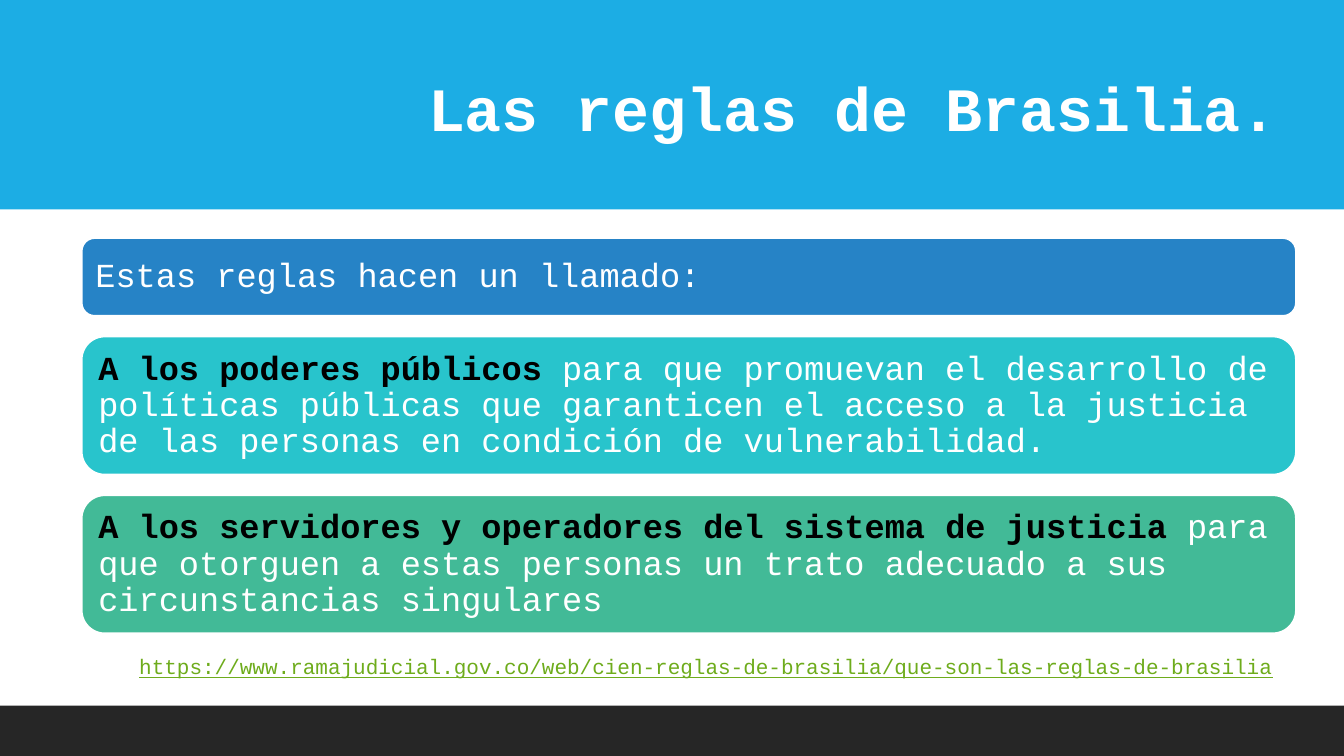
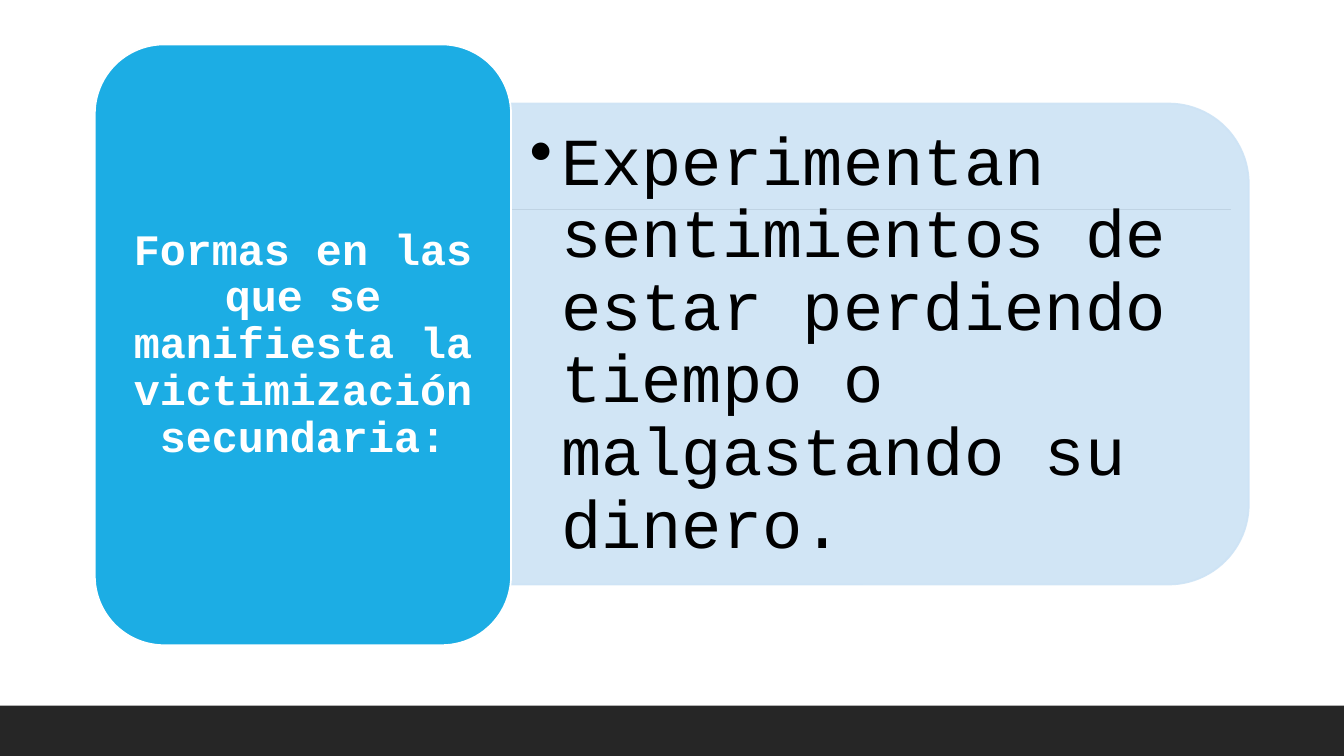
"""Build two slides on the rules of Brasilia and secondary harm."""
from dataclasses import dataclass

from lxml import etree
from pptx import Presentation
from pptx.dml.color import RGBColor
from pptx.enum.shapes import MSO_CONNECTOR, MSO_SHAPE
from pptx.enum.text import MSO_ANCHOR, MSO_AUTO_SIZE, PP_ALIGN
from pptx.oxml.ns import qn
from pptx.shapes.autoshape import Shape
from pptx.slide import Slide
from pptx.text.text import TextFrame, _Paragraph
from pptx.util import Cm, Pt

RECT = MSO_SHAPE.RECTANGLE
ROUND = MSO_SHAPE.ROUNDED_RECTANGLE
TAB = MSO_SHAPE.ROUND_2_SAME_RECTANGLE
LINE = MSO_CONNECTOR.STRAIGHT
MIDDLE = MSO_ANCHOR.MIDDLE
TOP = MSO_ANCHOR.TOP
FIXED = MSO_AUTO_SIZE.NONE
LEFT, CENTER, RIGHT = PP_ALIGN.LEFT, PP_ALIGN.CENTER, PP_ALIGN.RIGHT
TITLE_ONLY, BLANK = 5, 6


@dataclass(frozen=True)
class Theme:
    font: str = "Courier New"
    white: str = "FFFFFF"
    black: str = "000000"
    sky: str = "1CADE4"
    blue: str = "2683C6"
    teal: str = "28C4CC"
    green: str = "42BA97"
    pale: str = "CDE3F5"
    dark: str = "262626"
    rule: str = "404040"
    link: str = "6EAC1C"
    title: float = 44
    body: float = 24
    small: float = 15
    label: float = 31
    large: float = 48
    edge: float = 1.25
    tight: float = 0.9


@dataclass(frozen=True)
class Box:
    left: float
    top: float
    width: float
    height: float

    def place(self) -> tuple[Cm, Cm, Cm, Cm]:
        return Cm(self.left), Cm(self.top), Cm(self.width), Cm(self.height)


@dataclass(frozen=True)
class Card:
    fill: str
    height: float
    lead: str
    text: str


THEME = Theme()
WIDTH, HEIGHT = 33.87, 19.05
BAND = Box(0, 0, WIDTH, 5.28)
FOOT = Box(0, 17.78, WIDTH, 1.27)
STACK = Box(2.06, 6, 30.6, 9.96)
GAP = 0.52
CARDS = (
    Card(THEME.blue, 1.96, "", "Estas reglas hacen un llamado:"),
    Card(THEME.teal, 3.48, "A los poderes públicos ",
         "para que promuevan el desarrollo de políticas públicas que garanticen "
         "el acceso a la justicia de las personas en condición de vulnerabilidad."),
    Card(THEME.green, 3.48, "A los servidores y operadores del sistema de justicia ",
         "para que otorguen a estas personas un trato adecuado a sus "
         "circunstancias singulares"),
)
LINK = ("https://www.ramajudicial.gov.co/web/cien-reglas-de-brasilia/"
        "que-son-las-reglas-de-brasilia")


def color(code: str) -> RGBColor:
    """Turn a hex code into a colour."""
    return RGBColor.from_string(code)


def shape(slide: Slide, kind: MSO_SHAPE, box: Box, fill: str,
          edge: str | None = None) -> Shape:
    """Draw a flat filled shape, with an outline if one is given."""
    item = slide.shapes.add_shape(kind, *box.place())
    item.shadow.inherit = False
    item.fill.solid()
    item.fill.fore_color.rgb = color(fill)
    if edge:
        item.line.color.rgb = color(edge)
        item.line.width = Pt(THEME.edge)
    else:
        item.line.fill.background()
    return item


def frame(item: Shape, side: float, end: float,
          anchor: MSO_ANCHOR = MIDDLE) -> TextFrame:
    """Set the wrapping, insets and anchor of a text frame."""
    body = item.text_frame
    body.word_wrap = True
    body.auto_size = FIXED
    body.vertical_anchor = anchor
    body.margin_left = body.margin_right = Cm(side)
    body.margin_top = body.margin_bottom = Cm(end)
    return body


def style(para: _Paragraph, size: float, ink: str, align: PP_ALIGN = LEFT,
          bold: bool = False, space: float = THEME.tight) -> None:
    """Set the font, alignment and line spacing of a paragraph."""
    para.alignment = align
    para.line_spacing = space
    para.space_before = para.space_after = Pt(0)
    para.font.name = THEME.font
    para.font.size = Pt(size)
    para.font.bold = bold
    para.font.color.rgb = color(ink)


def bullet(para: _Paragraph, indent: float) -> None:
    """Give a paragraph a round bullet with a hanging indent."""
    props = para._p.get_or_add_pPr()
    props.set("marL", str(Cm(indent)))
    props.set("indent", str(-Cm(indent)))
    etree.SubElement(props, qn("a:buChar")).set("char", "•")


def fade(item: Shape, share: int) -> None:
    """Set the opacity of the fill and outline in percent."""
    for tint in item.element.spPr.iter(qn("a:srgbClr")):
        etree.SubElement(tint, qn("a:alpha")).set("val", str(share * 1000))


def footer(slide: Slide) -> None:
    """Draw the dark band at the foot."""
    shape(slide, RECT, FOOT, THEME.dark)


def header(slide: Slide, text: str) -> None:
    """Draw the top band and set the title over it."""
    shape(slide, RECT, BAND, THEME.sky)
    title = slide.shapes.title
    title.left, title.top, title.width, title.height = Box(
        2.06, 1.4, 30.17, 2.84).place()
    para = frame(title, 0, 0.13).paragraphs[0]
    para.text = text
    style(para, THEME.title, THEME.white, RIGHT, True)
    title.element.getparent().append(title.element)


def stack(slide: Slide) -> None:
    """Draw the cards one below the other."""
    top = STACK.top
    for card in CARDS:
        box = Box(STACK.left, top, STACK.width, card.height)
        item = shape(slide, ROUND, box, card.fill, THEME.white)
        para = frame(item, 0.25, 0.25).paragraphs[0]
        style(para, THEME.body, THEME.white)
        if card.lead:
            lead = para.add_run()
            lead.text = card.lead
            lead.font.bold = True
            lead.font.color.rgb = color(THEME.black)
        para.add_run().text = card.text
        top += card.height + GAP


def source(slide: Slide) -> None:
    """Write the web address under the cards."""
    item = slide.shapes.add_textbox(*Box(2.72, 16.33, 29.62, 0.89).place())
    para = frame(item, 0.25, 0.13, TOP).paragraphs[0]
    para.text = LINK
    style(para, THEME.small, THEME.link, RIGHT, space=1.0)
    para.font.underline = True


def rule(slide: Slide) -> None:
    """Draw the thin line behind the panel."""
    line = slide.shapes.add_connector(LINE, Cm(3.33), Cm(5.28), Cm(31.01), Cm(5.28))
    line.line.color.rgb = color(THEME.rule)
    line.line.width = Pt(1)
    etree.SubElement(line.element.spPr, qn("a:effectLst"))


def panel(slide: Slide) -> None:
    """Draw the pale panel with its bullet text."""
    back = shape(slide, TAB, Box(16.1, -0.64, 12.12, 18.62), THEME.pale, THEME.pale)
    back.rotation = 90
    fade(back, 90)
    item = slide.shapes.add_textbox(*Box(12.85, 3.23, 18.03, 10.92).place())
    para = frame(item, 0.5, 0.25).paragraphs[0]
    para.text = ("Experimentan sentimientos de estar perdiendo tiempo "
                 "o malgastando su dinero.")
    bullet(para, 0.79)
    style(para, THEME.large, THEME.black)


def label(slide: Slide) -> None:
    """Draw the blue label beside the panel."""
    item = shape(slide, ROUND, Box(2.39, 1.12, 10.49, 15.14), THEME.sky, THEME.white)
    para = frame(item, 0.33, 0.15).paragraphs[0]
    para.text = "Formas en las que se manifiesta la victimización secundaria:"
    style(para, THEME.label, THEME.white, CENTER, True)


def main() -> None:
    """Build and save the deck."""
    deck = Presentation()
    deck.slide_width, deck.slide_height = Cm(WIDTH), Cm(HEIGHT)

    rules = deck.slides.add_slide(deck.slide_layouts[TITLE_ONLY])
    footer(rules)
    header(rules, "Las reglas de Brasilia.")
    stack(rules)
    source(rules)

    forms = deck.slides.add_slide(deck.slide_layouts[BLANK])
    footer(forms)
    rule(forms)
    panel(forms)
    label(forms)

    deck.save("out.pptx")


if __name__ == "__main__":
    main()
